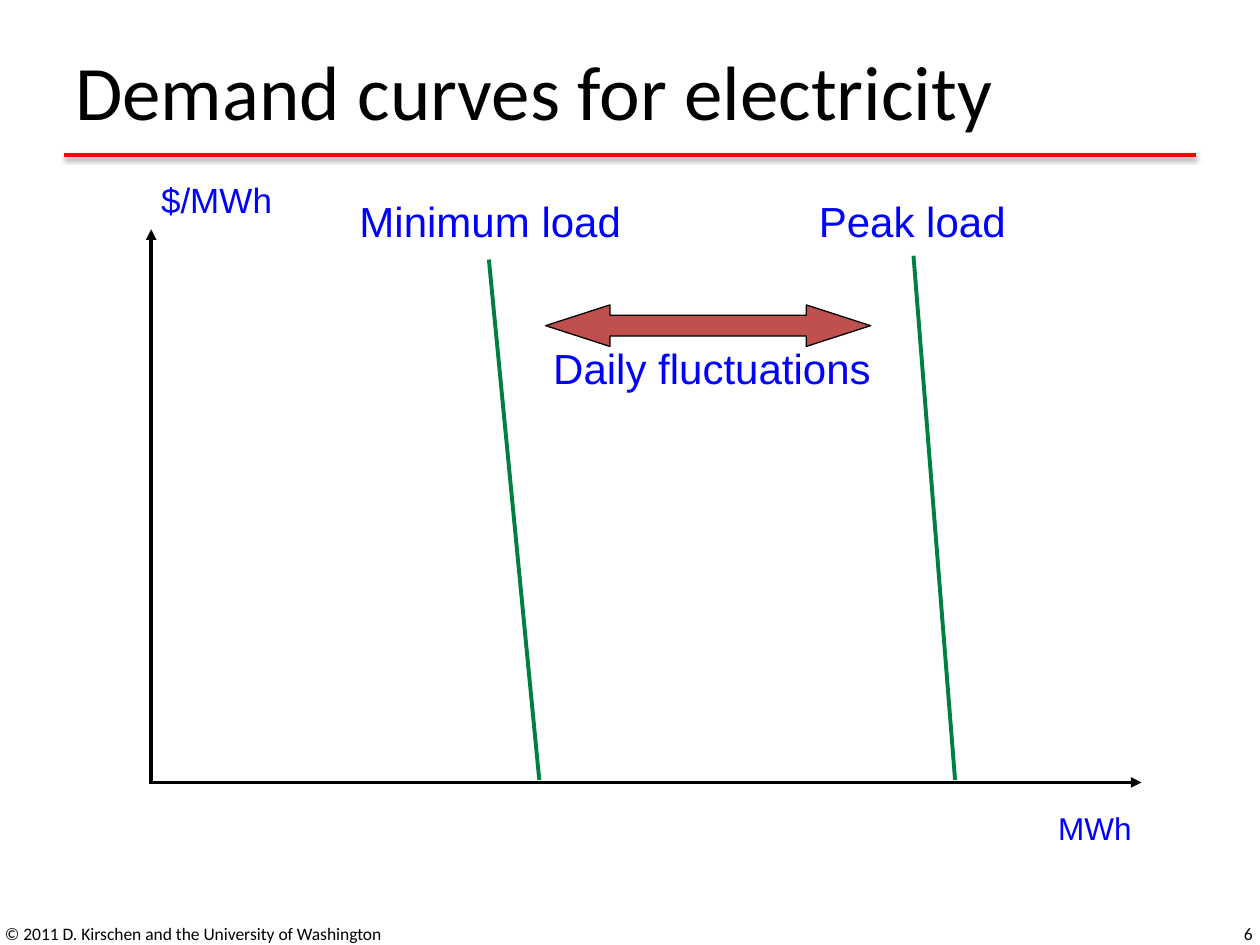
from lxml import etree
from pptx import Presentation
from pptx.dml.color import RGBColor
from pptx.enum.shapes import MSO_CONNECTOR, MSO_SHAPE
from pptx.enum.text import MSO_ANCHOR, PP_ALIGN
from pptx.oxml.ns import qn
from pptx.util import Inches, Pt

STRAIGHT = MSO_CONNECTOR.STRAIGHT
TOP, MIDDLE = MSO_ANCHOR.TOP, MSO_ANCHOR.MIDDLE
LEFT, CENTER, RIGHT = PP_ALIGN.LEFT, PP_ALIGN.CENTER, PP_ALIGN.RIGHT

BLACK = RGBColor(0x00, 0x00, 0x00)
RED = RGBColor(0xFF, 0x00, 0x00)
BLUE = RGBColor(0x00, 0x00, 0xFF)
GREEN = RGBColor(0x00, 0x80, 0x40)
BRICK = RGBColor(0xC0, 0x50, 0x4D)

prs = Presentation()
prs.slide_width, prs.slide_height = Inches(10), Inches(7.5)
slide = prs.slides.add_slide(prs.slide_layouts[6])


def add_line(start, end, color, width, arrow=False):
    """Draw a straight line and return its effect list, empty for no shadow."""
    line = slide.shapes.add_connector(
        STRAIGHT, *(Inches(value) for value in (*start, *end)))
    line.line.color.rgb = color
    line.line.width = Pt(width)
    if arrow:
        etree.SubElement(line.line._get_or_add_ln(), qn("a:tailEnd"), type="triangle")
    return etree.SubElement(line._element.spPr, qn("a:effectLst"))


def add_label(text, box, size, font, color, align=LEFT, anchor=MIDDLE, wrap=True):
    label = slide.shapes.add_textbox(*(Inches(value) for value in box))
    frame = label.text_frame
    frame.word_wrap = wrap
    frame.vertical_anchor = anchor
    paragraph = frame.paragraphs[0]
    paragraph.alignment = align
    run = paragraph.add_run()
    run.text = text
    run.font.size = Pt(size)
    run.font.name = font
    run.font.color.rgb = color


# Title, its shadowed rule and the footer
title_effects = add_line((0.51, 1.23), (9.49, 1.23), RED, 2)
shadow = etree.SubElement(title_effects, qn("a:outerShdw"), blurRad=str(Pt(3.1)),
                          dist=str(Pt(1.6)), dir="5400000", rotWithShape="0")
shadow_color = etree.SubElement(shadow, qn("a:srgbClr"), val=str(BLACK))
etree.SubElement(shadow_color, qn("a:alpha"), val="38000")

add_label("Demand curves for electricity", (0.5, 0.13, 9, 1.17), 44, "Calibri", BLACK)
add_label("© 2011 D. Kirschen and the University of Washington",
          (-0.06, 7.21, 3.88, 0.4), 10, "Calibri", BLACK)
add_label("6", (7.71, 7.21, 2.33, 0.4), 10, "Calibri", BLACK, RIGHT)

# Axes
add_line((1.19, 6.21), (9.06, 6.21), BLACK, 2, arrow=True)
add_line((1.2, 6.22), (1.2, 1.82), BLACK, 2, arrow=True)
add_label("$/MWh", (1.18, 1.37, 1.08, 0.43), 20, "Arial", BLUE, anchor=TOP)
add_label("MWh", (8.3, 6.37, 0.78, 0.4), 18, "Arial", BLUE, anchor=TOP, wrap=False)

# Demand curves: name, label box, foot and top of the curve
curves = [
    ("Minimum load", (2.75, 1.5, 2.28, 0.5), (4.28, 6.19), (3.88, 2.06)),
    ("Peak load", (6.4, 1.5, 1.68, 0.5), (7.58, 6.19), (7.25, 2.03)),
]
for name, box, foot, top in curves:
    add_line(foot, top, GREEN, 2.25)
    add_label(name, box, 24, "Arial", BLUE, CENTER, wrap=False)

# Range between the two curves
fluctuation = slide.shapes.add_shape(
    MSO_SHAPE.LEFT_RIGHT_ARROW, Inches(4.33), Inches(2.42), Inches(2.58), Inches(0.33))
fluctuation.adjustments[0] = 0.5
fluctuation.adjustments[1] = 1.55
fluctuation.shadow.inherit = False
fluctuation.fill.solid()
fluctuation.fill.fore_color.rgb = BRICK
fluctuation.line.color.rgb = BLACK
fluctuation.line.width = Pt(0.75)
add_label("Daily fluctuations", (4.29, 2.67, 2.72, 0.5), 24, "Arial", BLUE, CENTER,
          wrap=False)

prs.save("out.pptx")
